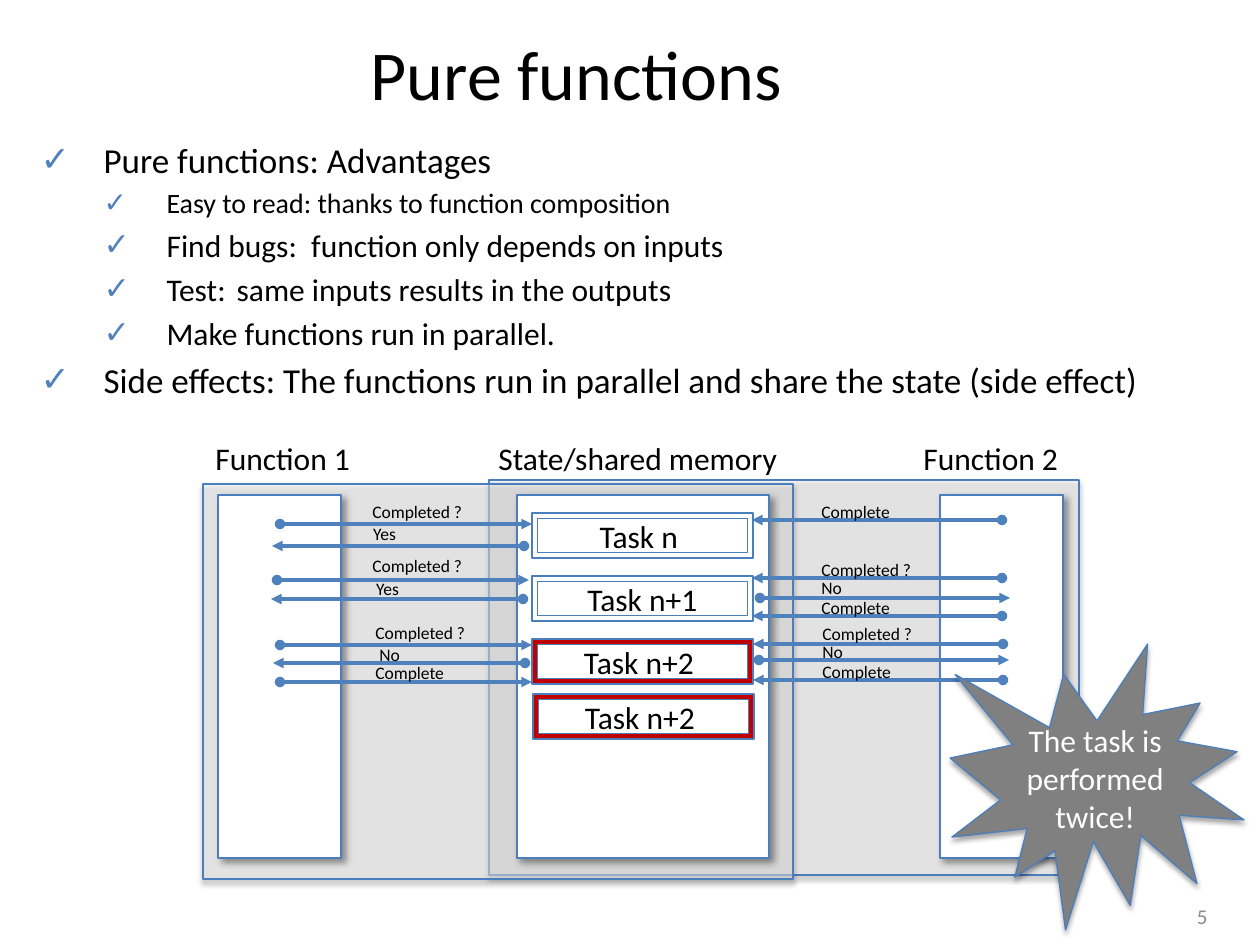
"""Build the slide on pure functions and the shared-state race between two functions."""
from lxml.etree import SubElement
from pptx import Presentation
from pptx.dml.color import RGBColor
from pptx.enum.shapes import MSO_CONNECTOR, MSO_SHAPE
from pptx.enum.text import MSO_ANCHOR, MSO_AUTO_SIZE, PP_ALIGN
from pptx.oxml.ns import qn
from pptx.util import Emu, Pt

COLORS = {"ink": "000000", "white": "FFFFFF", "edge": "4B7EBC", "accent": "4F81BD",
          "scope": "F2F2F2", "alert": "C00000", "burst": "808080", "number": "8C8C8C"}
FONT = "Calibri"
WIDTH, HEIGHT = 1260, 945
SOFT_SHADOW = (35, 3.1, 1.8, 90)
DEEP_SHADOW = (40, 4, 3, 45)

TITLE = "Pure functions"
BULLETS = [
    (0, 20, "Pure functions: Advantages"),
    (1, 16, "Easy to read: thanks to function composition"),
    (1, 18, "Find bugs:  function only depends on inputs"),
    (1, 18, "Test:\t same inputs results in the outputs"),
    (1, 18, "Make functions run in parallel."),
    (0, 20, "Side effects: The functions run in parallel and share the state (side effect)"),
]
SCOPES = [(489, 480), (203, 484)]
COLUMNS = [
    ("State/shared memory", 486, 348, 517, 252),
    ("Function 1", 203, 183, 218, 123),
    ("Function 2", 911, 183, 940, 123),
]
TASKS = [
    ("Task n ", 532, 513, "white"),
    ("Task n+1", 532, 576, "white"),
    ("Task n+2 ", 532, 639, "alert"),
    ("Task n+2 ", 533, 694, "alert"),
]
LANES = {"ask 1": (280, 532), "reply 1": (524, 272),
         "ask 2": (1002, 752), "reply 2": (760, 1010)}
MESSAGES = [
    ("ask 1", 0, 524, "Completed ?", 360, 495),
    ("reply 1", 0, 546, "Yes", 331, 517),
    ("ask 1", -3, 580, "Completed ?", 360, 549),
    ("reply 1", -1, 599, "Yes", 334, 572),
    ("ask 1", 0, 645, "Completed ?", 363, 616),
    ("reply 1", 1, 663, "No", 336, 638),
    ("ask 1", 0, 682, "Complete", 363, 656),
    ("ask 2", 0, 520, "Complete", 809, 495),
    ("ask 2", 0, 578, "Completed ?", 809, 553),
    ("reply 2", 0, 598, "No", 809, 571),
    ("ask 2", 0, 616, "Complete", 809, 591),
    ("ask 2", 1, 644, "Completed ?", 810, 617),
    ("reply 2", -1, 660, "No", 810, 635),
    ("ask 2", 1, 680, "Complete", 810, 655),
]
WARNING = "The task is performed twice!"
SLIDE_NUMBER = "5"


def px(value):
    return Emu(round(value * 914400 / 126))


def rgb(name):
    return RGBColor.from_string(COLORS[name])


def place(shape, left, top, width, height):
    shape.left, shape.top, shape.width, shape.height = map(px, (left, top, width, height))


def style(paragraph, size, color="ink", align=None):
    paragraph.alignment = align
    font = paragraph.font
    font.name, font.size = FONT, Pt(size)
    font.color.rgb = rgb(color)


def add_shadow(shape, opacity, blur, distance, angle):
    effects = shape._element.spPr.find(qn("a:effectLst"))
    shadow = SubElement(effects, qn("a:outerShdw"), blurRad=str(Pt(blur)), dist=str(Pt(distance)),
                        dir=str(angle * 60000), algn="t", rotWithShape="0")
    black = SubElement(shadow, qn("a:srgbClr"), val="000000")
    SubElement(black, qn("a:alpha"), val=str(opacity * 1000))


def add_box(slide, kind, box, fill, shadow=None, text="", color="ink"):
    shape = slide.shapes.add_shape(kind, *map(px, box))
    shape.shadow.inherit = False
    shape.fill.solid()
    shape.fill.fore_color.rgb = rgb(fill)
    shape.line.color.rgb = rgb("edge")
    shape.line.width = Pt(0.75)
    if shadow:
        add_shadow(shape, *shadow)
    if text:
        frame = shape.text_frame
        frame.text, frame.vertical_anchor = text, MSO_ANCHOR.MIDDLE
        style(frame.paragraphs[0], 18, color, PP_ALIGN.CENTER)
    return shape


def add_label(slide, box, text, size, color="ink", align=PP_ALIGN.LEFT):
    frame = slide.shapes.add_textbox(*map(px, box)).text_frame
    frame.word_wrap, frame.auto_size = True, MSO_AUTO_SIZE.SHAPE_TO_FIT_TEXT
    frame.text = text
    style(frame.paragraphs[0], size, color, align)
    return frame


def add_arrow(slide, start, end, y):
    arrow = slide.shapes.add_connector(MSO_CONNECTOR.STRAIGHT, px(start), px(y), px(end), px(y))
    arrow.line.color.rgb = rgb("accent")
    arrow.line.width = Pt(2)
    line = arrow.line._get_or_add_ln()
    SubElement(line, qn("a:headEnd"), type="oval")
    SubElement(line, qn("a:tailEnd"), type="triangle")
    SubElement(arrow._element.spPr, qn("a:effectLst"))


def add_check(paragraph, level):
    props = paragraph._p.get_or_add_pPr()
    props.set("marL", str(px(63 * (level + 1))))
    props.set("indent", str(-px(63)))
    SubElement(SubElement(props, qn("a:buClr")), qn("a:srgbClr"), val=COLORS["accent"])
    SubElement(props, qn("a:buFont"), typeface="Arial")
    SubElement(props, qn("a:buChar"), char="✓")


def fill_body(body):
    frame = body.text_frame
    frame.text = "\n".join(text for _, _, text in BULLETS)
    for paragraph, (level, size, _) in zip(frame.paragraphs, BULLETS):
        paragraph.level = level
        add_check(paragraph, level)
        style(paragraph, size)
    frame.paragraphs[0].space_before = Pt(0)


def add_scope(slide, left, top):
    scope = add_box(slide, MSO_SHAPE.RECTANGLE, (left, top, 590, 395), "scope", SOFT_SHADOW)
    tint = scope._element.spPr.find(qn("a:solidFill"))[0]
    SubElement(tint, qn("a:alpha"), val="50000")


def main():
    deck = Presentation()
    deck.slide_width, deck.slide_height = px(WIDTH), px(HEIGHT)
    slide = deck.slides.add_slide(deck.slide_layouts[1])
    title, body = slide.placeholders

    place(title, 28, 34, 1097, 77)
    title.text_frame.text = TITLE
    style(title.text_frame.paragraphs[0], 40, align=PP_ALIGN.CENTER)
    place(body, 28, 132, 1192, 725)
    fill_body(body)

    for left, top in SCOPES:
        add_scope(slide, left, top)
    for heading, heading_left, heading_width, left, width in COLUMNS:
        add_box(slide, MSO_SHAPE.RECTANGLE, (left, 495, width, 363), "white", DEEP_SHADOW)
        add_label(slide, (heading_left, 433, heading_width, 50), heading, 18)
    for task, left, top, fill in TASKS:
        add_box(slide, MSO_SHAPE.FRAME, (left, top, 221, 45), fill, text=task)
    for lane, shift, y, message, left, top in MESSAGES:
        start, end = LANES[lane]
        add_arrow(slide, start + shift, end + shift, y)
        centred = lane == "reply 1"
        add_label(slide, (left, top, 107 if centred else 126, 34), message, 10,
                  align=PP_ALIGN.CENTER if centred else PP_ALIGN.LEFT)

    add_box(slide, MSO_SHAPE.EXPLOSION1, (950, 644, 294, 286), "burst", SOFT_SHADOW, WARNING, "white")
    number = add_label(slide, (926, 891, 294, 50), SLIDE_NUMBER, 12, "number", PP_ALIGN.RIGHT)
    number.auto_size, number.vertical_anchor = MSO_AUTO_SIZE.NONE, MSO_ANCHOR.MIDDLE
    deck.save("out.pptx")


if __name__ == "__main__":
    main()
